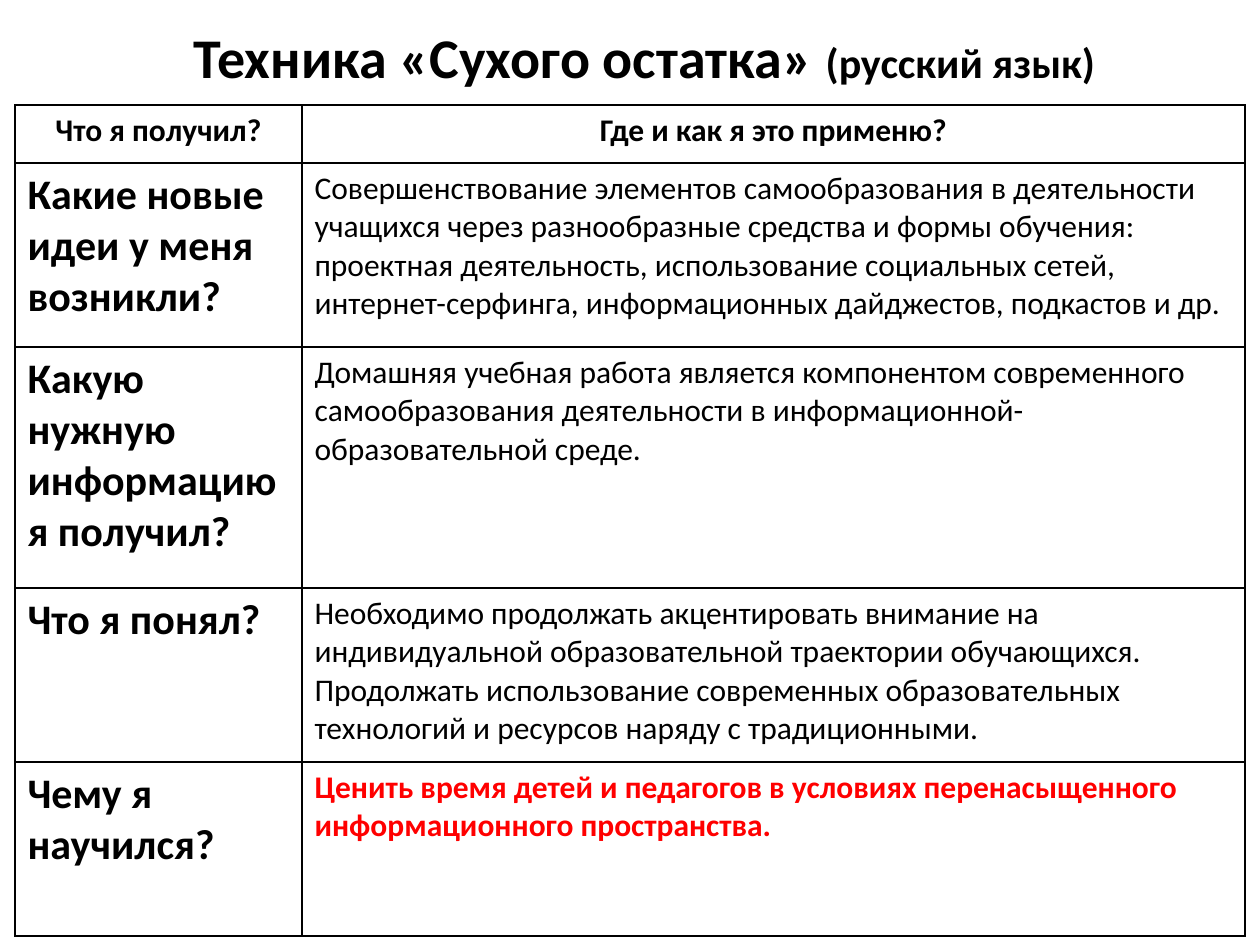
from dataclasses import dataclass

from lxml import etree
from pptx import Presentation
from pptx.dml.color import RGBColor
from pptx.enum.text import MSO_ANCHOR, MSO_AUTO_SIZE, PP_ALIGN
from pptx.oxml.ns import qn
from pptx.util import Emu, Pt

PX = 914400 // 126
LEFT, CENTER = PP_ALIGN.LEFT, PP_ALIGN.CENTER
TOP = MSO_ANCHOR.TOP
NO_FIT = MSO_AUTO_SIZE.NONE


@dataclass(frozen=True)
class Theme:
    font: str = "Calibri"
    ink: str = "000000"
    paper: str = "FFFFFF"
    accent: str = "FF0000"
    title: int = 32
    large: int = 24
    body: int = 18
    rule: int = 1


THEME = Theme()


@dataclass(frozen=True)
class Span:
    text: str
    size: int = THEME.body
    bold: bool = False
    color: str = THEME.ink


@dataclass(frozen=True)
class Row:
    height: int
    cells: tuple[Span, Span]
    align: PP_ALIGN = LEFT


def ask(text: str) -> Span:
    """Make the large bold question of the left column."""
    return Span(text, THEME.large, True)


TITLE = (
    Span("Техника «Сухого остатка» ", THEME.title, True),
    Span("(русский язык)", THEME.large, True),
)
COLS = (287, 943)
ROWS = (
    Row(58, (Span("Что я получил?", bold=True),
             Span("Где и как я это применю?", bold=True)), CENTER),
    Row(184, (ask("Какие новые идеи у меня возникли?"), Span(
        "Совершенствование элементов самообразования в деятельности учащихся "
        "через разнообразные средства и формы обучения: проектная деятельность, "
        "использование социальных сетей, интернет-серфинга, информационных "
        "дайджестов, подкастов и др."))),
    Row(241, (ask("Какую нужную информацию я получил?"), Span(
        "Домашняя учебная работа является компонентом современного "
        "самообразования деятельности в информационной-образовательной среде."))),
    Row(174, (ask("Что я понял?"), Span(
        "Необходимо продолжать акцентировать внимание на индивидуальной "
        "образовательной траектории обучающихся. Продолжать использование "
        "современных образовательных технологий и ресурсов наряду с "
        "традиционными."))),
    Row(174, (ask("Чему я научился?"), Span(
        "Ценить время детей и педагогов в условиях перенасыщенного "
        "информационного пространства.", bold=True, color=THEME.accent))),
)


def px(count: int) -> Emu:
    return Emu(count * PX)


def write(frame, spans: tuple[Span, ...], align: PP_ALIGN) -> None:
    para = frame.paragraphs[0]
    para.alignment = align
    for span in spans:
        run = para.add_run()
        run.text = span.text
        font = run.font
        font.name, font.size, font.bold = THEME.font, Pt(span.size), span.bold
        font.color.rgb = RGBColor.from_string(span.color)


def frame_cell(cell) -> None:
    """Rule all four sides; borders must come before the fill."""
    props = cell._tc.get_or_add_tcPr()
    for side in ("lnL", "lnR", "lnT", "lnB"):
        line = etree.SubElement(props, qn(f"a:{side}"), w=str(Pt(THEME.rule)))
        fill = etree.SubElement(line, qn("a:solidFill"))
        etree.SubElement(fill, qn("a:srgbClr"), val=THEME.ink)
    cell.fill.solid()
    cell.fill.fore_color.rgb = RGBColor.from_string(THEME.paper)


def add_title(slide) -> None:
    title = slide.shapes.title
    title.left, title.top = px(54), px(16)
    title.width, title.height = px(1181), px(69)
    frame = title.text_frame
    frame.auto_size = NO_FIT
    frame.word_wrap = True
    frame.vertical_anchor = TOP
    write(frame, TITLE, CENTER)


def add_grid(slide) -> None:
    high = sum(row.height for row in ROWS)
    grid = slide.shapes.add_table(
        len(ROWS), len(COLS), px(15), px(105), px(sum(COLS)), px(high)).table
    grid.first_row = grid.horz_banding = False
    for col, width in zip(grid.columns, COLS):
        col.width = px(width)
    for line, row in zip(grid.rows, ROWS):
        line.height = px(row.height)
        for cell, span in zip(line.cells, row.cells):
            frame_cell(cell)
            cell.vertical_anchor = TOP
            write(cell.text_frame, (span,), row.align)


def main() -> None:
    deck = Presentation()
    deck.slide_width, deck.slide_height = px(1260), px(945)
    slide = deck.slides.add_slide(deck.slide_layouts.get_by_name("Title Only"))
    add_title(slide)
    add_grid(slide)
    deck.save("out.pptx")


if __name__ == "__main__":
    main()
